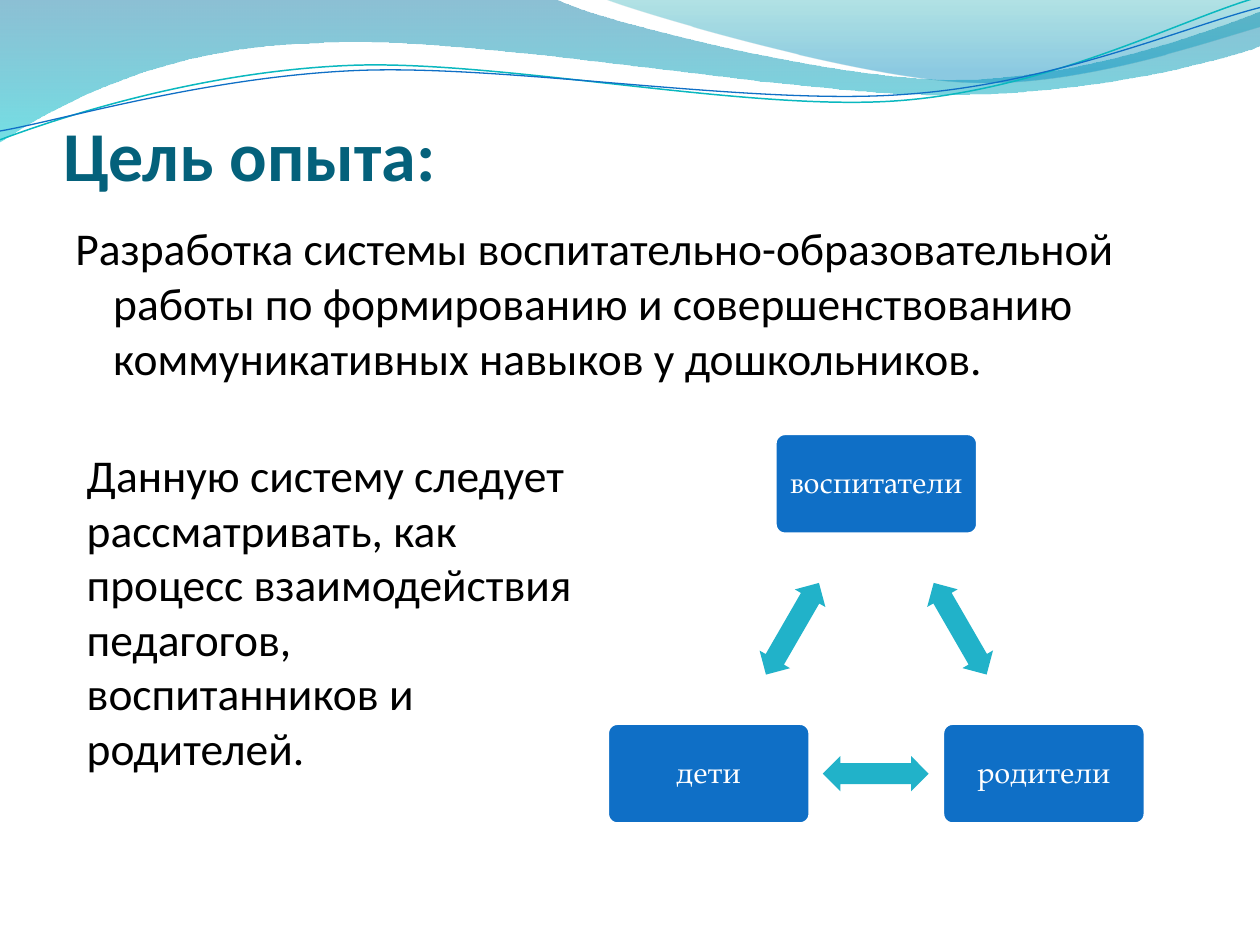
from pptx import Presentation
from pptx.dml.color import RGBColor
from pptx.enum.shapes import MSO_SHAPE
from pptx.enum.text import MSO_ANCHOR, MSO_AUTO_SIZE, PP_ALIGN
from pptx.oxml import parse_xml
from pptx.oxml.ns import nsdecls, qn
from pptx.util import Pt

BOX = MSO_SHAPE.ROUNDED_RECTANGLE
ARROW = MSO_SHAPE.LEFT_RIGHT_ARROW
MID, LOW = MSO_ANCHOR.MIDDLE, MSO_ANCHOR.BOTTOM
LEFT, MIDDLE = PP_ALIGN.LEFT, PP_ALIGN.CENTER
FIXED = MSO_AUTO_SIZE.NONE
PX = 9144


def color(code):
    return RGBColor.from_string(code)


def write(frame, text, font, size, code):
    run = frame.paragraphs[0].add_run()
    run.text = text
    run.font.name = font
    run.font.size = Pt(size)
    run.font.color.rgb = color(code)
    return run


deck = Presentation()
deck.slide_width, deck.slide_height = 1000 * PX, 750 * PX
slide = deck.slides.add_slide(deck.slide_layouts[5])
shapes = slide.shapes

waves = [
    ([(0, 0)], [(440, -1)], [(476, 17), (664, 63), (758, 63)],
     [(853, 63), (958, 26), (1000, 9)], [(1001, 36)],
     [(983, 44), (870, 76), (746, 75)], [(622, 75), (382, 28), (257, 34)],
     [(129, 36), (46, 83), (-1, 113)], [(0, 0)]),
    ([(479, -1)], [(509, 11), (682, 62), (769, 65)],
     [(856, 69), (961, 32), (1000, 21)], [(1000, 0)], [(479, -1)]),
    ([(0, 111)], [(48, 93), (158, 57), (277, 52)],
     [(395, 47), (593, 89), (713, 80)], [(833, 71), (938, 15), (998, -2)]),
    ([(0, 104)], [(47, 96), (164, 61), (283, 56)],
     [(403, 51), (597, 84), (717, 75)], [(836, 67), (941, 21), (1000, 6)]),
]
looks = [
    [(0, "0074A1", 45), (1, "00C6CF", 55)],
    [(0, "00A1A9", 30), (0.8, "008BBF", 45)],
    ("0AB8BF", 0.85),
    ("0F6FC6", 0.75),
]
for parts, look in zip(waves, looks):
    filled = isinstance(look, list)
    dots = [dot for part in parts for dot in part]
    pen = shapes.build_freeform(*dots[0], scale=PX)
    pen.add_line_segments(dots[1:], close=filled)
    wave = pen.convert_to_shape()
    wave.shadow.inherit = False

    lines = iter(list(wave._element.iter(qn("a:lnTo"))))
    for part in parts[1:]:
        group = [next(lines) for dot in part]
        if len(group) == 3:
            curve = parse_xml(f'<a:cubicBezTo {nsdecls("a")}/>')
            group[0].addprevious(curve)
            for line in group:
                curve.append(line[0])
                line.getparent().remove(line)

    if filled:
        wave.line.fill.background()
        wave.fill.gradient()
        wave.fill.gradient_angle = 270
        for stop, (place, code, alpha) in zip(wave.fill.gradient_stops, look):
            stop.position = place
            stop.color.rgb = color(code)
        for node, (place, code, alpha) in zip(wave._element.iter(qn("a:srgbClr")), look):
            node.append(parse_xml(f'<a:alpha {nsdecls("a")} val="{alpha * 1000}"/>'))
    else:
        wave.fill.background()
        wave.line.color.rgb = color(look[0])
        wave.line.width = Pt(look[1])

title = shapes.title
title.left, title.top, title.width, title.height = 50 * PX, 77 * PX, 900 * PX, 78 * PX
frame = title.text_frame
frame.auto_size = FIXED
frame.vertical_anchor = LOW
frame.margin_left = frame.margin_right = frame.margin_bottom = 0
frame.margin_top = 5 * PX
frame.paragraphs[0].alignment = LEFT
write(frame, "Цель опыта:", "Calibri", 40, "04617B").font.bold = True

texts = [
    (50, 170, 900, 165, 30, "Разработка системы воспитательно-образовательной работы по "
     "формированию и совершенствованию коммуникативных навыков у дошкольников."),
    (59, 350, 417, 273, 0, "Данную систему следует рассматривать, как процесс "
     "взаимодействия педагогов, воспитанников и родителей."),
]
for x, y, w, h, hang, text in texts:
    frame = shapes.add_textbox(x * PX, y * PX, w * PX, h * PX).text_frame
    frame.word_wrap = True
    if hang:
        props = frame.paragraphs[0]._p.get_or_add_pPr()
        props.set("marL", str(hang * PX))
        props.set("indent", str(-hang * PX))
    write(frame, text, "Calibri", 26, "000000")

for x, y, text in [(615, 344, "воспитатели"), (748, 574, "родители"), (482, 574, "дети")]:
    box = shapes.add_shape(BOX, x * PX, y * PX, 161 * PX, 80 * PX)
    box.adjustments[0] = 0.1
    box.shadow.inherit = False
    box.fill.solid()
    box.fill.fore_color.rgb = color("0F6FC6")
    box.line.color.rgb = color("FFFFFF")
    box.line.width = Pt(2)
    frame = box.text_frame
    frame.word_wrap = True
    frame.vertical_anchor = MID
    frame.margin_left = frame.margin_right = frame.margin_top = frame.margin_bottom = 7 * PX
    frame.paragraphs[0].alignment = MIDDLE
    frame.paragraphs[0].line_spacing = 0.9
    write(frame, text, "TeX Gyre Pagella", 17, "FFFFFF")

for x, y, turn in [(720, 485, 60), (653, 600, 180), (587, 485, 300)]:
    arrow = shapes.add_shape(ARROW, x * PX, y * PX, 84 * PX, 28 * PX)
    arrow.adjustments[0], arrow.adjustments[1] = 0.6, 0.5
    arrow.rotation = turn
    arrow.shadow.inherit = False
    arrow.fill.solid()
    arrow.fill.fore_color.rgb = color("21B2C9")
    arrow.line.fill.background()

deck.save("out.pptx")
